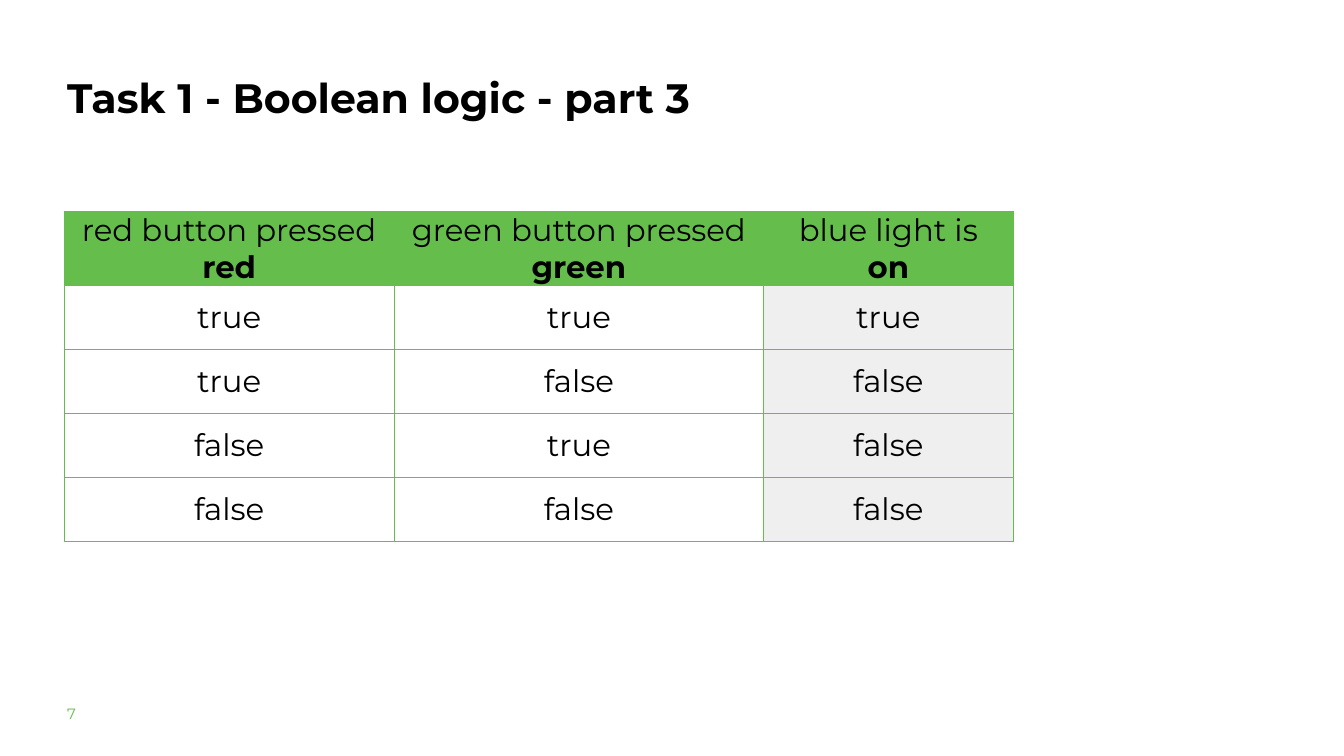
from dataclasses import dataclass

from lxml.etree import SubElement
from pptx import Presentation
from pptx.dml.color import RGBColor
from pptx.enum.text import MSO_ANCHOR, PP_ALIGN
from pptx.oxml.ns import qn
from pptx.util import Inches, Pt


@dataclass(frozen=True)
class Theme:
    font: str = "Montserrat"
    ink: str = "000000"
    green: str = "65BE4B"
    result: str = "EFEFEF"
    title_size: int = 44
    table_size: int = 33
    number_size: int = 16
    border_width: float = 0.75


THEME = Theme()
MARGIN = 1
CELL_INSET = 0.2
ROW_HEIGHT = 0.88
COLUMN_WIDTHS = [4.92, 5.49, 3.72]
HEADINGS = [
    ("red button pressed", "red"),
    ("green button pressed", "green"),
    ("blue light is", "on"),
]
TRUTH_ROWS = [
    (str(red).lower(), str(green).lower(), str(red and green).lower())
    for red in (True, False)
    for green in (True, False)
]


def write(para, text, size, color=THEME.ink, bold=False, align=PP_ALIGN.LEFT):
    para.alignment = align
    span = para.add_run()
    span.text = text
    span.font.name = THEME.font
    span.font.size = Pt(size)
    span.font.bold = bold
    span.font.color.rgb = RGBColor.from_string(color)


def draw_borders(cell):
    properties = cell._tc.get_or_add_tcPr()
    for side in ("a:lnL", "a:lnR", "a:lnT", "a:lnB"):
        line = SubElement(properties, qn(side), w=str(Pt(THEME.border_width)))
        fill = SubElement(line, qn("a:solidFill"))
        SubElement(fill, qn("a:srgbClr"), val=THEME.green)


deck = Presentation()
deck.slide_width, deck.slide_height = Inches(20), Inches(11.25)
page = deck.slides.add_slide(deck.slide_layouts[5])

# Title and page number share the left margin and have no insets.
title = page.shapes.title
title.left, title.top = Inches(MARGIN), Inches(0.97)
title.width, title.height = Inches(17.76), Inches(1.78)
number = page.shapes.add_textbox(
    Inches(MARGIN), Inches(10.48), Inches(1.57), Inches(0.39)
)
for box in (title, number):
    frame = box.text_frame
    frame.word_wrap = True
    frame.vertical_anchor = MSO_ANCHOR.TOP
    frame.margin_left = frame.margin_right = 0
    frame.margin_top = frame.margin_bottom = 0

heading = title.text_frame.paragraphs[0]
heading.line_spacing = 1.15
write(heading, "Task 1 - Boolean logic - part 3", THEME.title_size, bold=True)
write(number.text_frame.paragraphs[0], "7", THEME.number_size, color=THEME.green)

# Truth table: a two-line heading row, then one row for each pair of inputs.
rows = [HEADINGS] + [[(value,) for value in row] for row in TRUTH_ROWS]
table = page.shapes.add_table(
    len(rows), len(COLUMN_WIDTHS), Inches(0.95), Inches(3.15),
    Inches(sum(COLUMN_WIDTHS)), Inches(ROW_HEIGHT * len(rows)),
).table
for column, width in zip(table.columns, COLUMN_WIDTHS):
    column.width = Inches(width)

for row_index, row in enumerate(rows):
    table.rows[row_index].height = Inches(ROW_HEIGHT)
    is_heading = row_index == 0
    for column_index, lines in enumerate(row):
        cell = table.cell(row_index, column_index)
        cell.vertical_anchor = MSO_ANCHOR.MIDDLE
        cell.margin_left = cell.margin_right = Inches(CELL_INSET)
        cell.margin_top = cell.margin_bottom = Inches(0 if is_heading else CELL_INSET)
        draw_borders(cell)
        if is_heading:
            cell.fill.solid()
            cell.fill.fore_color.rgb = RGBColor.from_string(THEME.green)
        elif column_index == len(COLUMN_WIDTHS) - 1:
            cell.fill.solid()
            cell.fill.fore_color.rgb = RGBColor.from_string(THEME.result)
        else:
            cell.fill.background()
        for line_index, text in enumerate(lines):
            frame = cell.text_frame
            para = frame.add_paragraph() if line_index else frame.paragraphs[0]
            write(para, text, THEME.table_size, bold=line_index > 0,
                  align=PP_ALIGN.CENTER)

deck.save("out.pptx")
